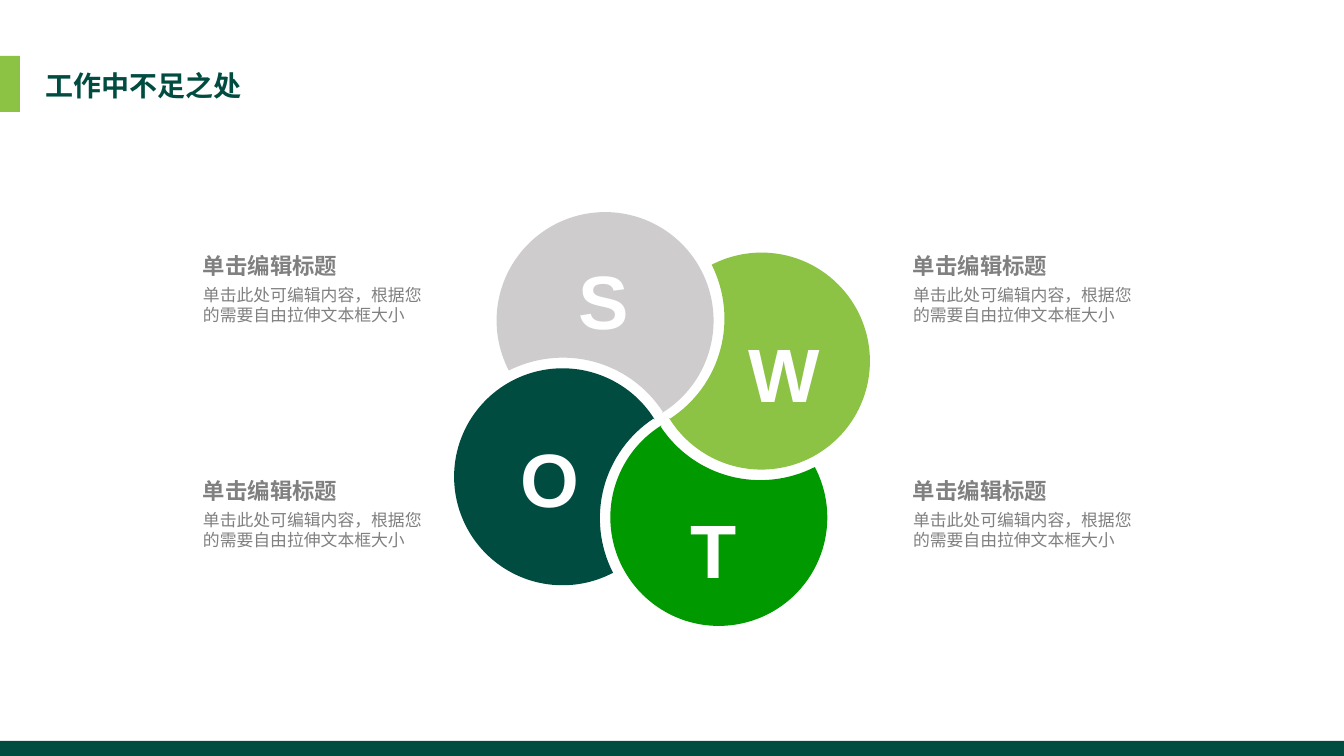
from math import cos, radians, sin, tan

from lxml.etree import SubElement
from pptx import Presentation
from pptx.dml.color import RGBColor
from pptx.enum.shapes import MSO_SHAPE as Shape
from pptx.enum.text import MSO_ANCHOR as Anchor, MSO_AUTO_SIZE as AutoSize, PP_ALIGN as Align
from pptx.oxml.ns import qn
from pptx.util import Inches, Pt

TITLE = "工作中不足之处"
HEADING = "单击编辑标题"
DETAIL = "单击此处可编辑内容，根据您的需要自由拉伸文本框大小"
PETALS = [
    ("S", "silver", (608, 311), 323.3, (531, 247)),
    ("W", "lime", (771, 364), 53.4, (712, 320)),
    ("T", "green", (716, 527), 143, (641, 496)),
    ("O", "forest", (553, 474), 233, (477, 425)),
]
BARS = [("lime", (0, 56, 20, 56)), ("forest", (0, 741, 1344, 15))]
CAPTION_LEFTS = (203, 913)
CAPTION_TOPS = (252, 477)
COLORS = {
    "silver": "CECCCC",
    "lime": "8CC345",
    "green": "009900",
    "forest": "004C41",
    "gray": "808080",
    "white": "FFFFFF",
}

PETAL_WIDTH, PETAL_HEIGHT = 230, 234
OUTER_ARC = {"center": (107, 123), "radius": 108.5, "start": 95.1, "end": -170.7, "pieces": 4}
NOTCH_ARC = {"center": (-20, 223), "radius": 119, "start": -80.5, "end": 3.7, "pieces": 2}
PX = Inches(10) / 1344


def px(*lengths):
    return [round(length * PX) for length in lengths]


def paint(shape, color):
    shape.shadow.inherit = False
    shape.fill.solid()
    shape.fill.fore_color.rgb = RGBColor.from_string(COLORS[color])
    shape.line.fill.background()


def write(shape, text, size, color, bold=True, align=Align.LEFT, margins=None):
    frame = shape.text_frame
    frame.word_wrap = True
    frame.auto_size = AutoSize.NONE
    if margins is not None:
        frame.margin_left = frame.margin_right = margins
        frame.margin_top = frame.margin_bottom = margins
    frame.text = text
    paragraph = frame.paragraphs[0]
    paragraph.alignment = align
    font = paragraph.font
    font.name, font.size, font.bold = "Arial", Pt(size), bold
    font.color.rgb = RGBColor.from_string(COLORS[color])


def arc_curves(center, radius, start, end, pieces):
    step = radians(end - start) / pieces
    reach = 4 / 3 * tan(step / 4)

    def point(angle, pull):
        return (center[0] + radius * (cos(angle) - pull * sin(angle)),
                center[1] + radius * (sin(angle) + pull * cos(angle)))

    angles = [radians(start) + step * i for i in range(pieces + 1)]
    return [(point(a, 0), point(a, reach), point(b, -reach), point(b, 0))
            for a, b in zip(angles, angles[1:])]


def add_command(outline, tag, points):
    command = SubElement(outline, qn(tag))
    for point in points:
        x, y = px(*point)
        SubElement(command, qn("a:pt"), x=str(x), y=str(y))


def add_petal(shapes, center, tilt):
    width, height = px(PETAL_WIDTH, PETAL_HEIGHT)
    left, top = px(center[0] - PETAL_WIDTH / 2, center[1] - PETAL_HEIGHT / 2)
    builder = shapes.build_freeform(0, 0)
    builder.add_line_segments([(width, 0), (width, height), (0, height)])
    petal = builder.convert_to_shape(left, top)
    petal.rotation = tilt
    outline = next(petal.element.iter(qn("a:path")))
    for corner in list(outline):
        outline.remove(corner)
    curves = arc_curves(**OUTER_ARC) + arc_curves(**NOTCH_ARC)
    add_command(outline, "a:moveTo", curves[0][:1])
    for curve in curves:
        add_command(outline, "a:cubicBezTo", curve[1:])
    SubElement(outline, qn("a:close"))
    return petal


prs = Presentation()
prs.slide_width, prs.slide_height = px(1344, 756)
slide = prs.slides.add_slide(prs.slide_layouts[5])
shapes = slide.shapes

title = shapes.title
title.left, title.top, title.width, title.height = px(32, 62, 296, 47)
write(title, TITLE, 15, "forest")
title.text_frame.vertical_anchor = Anchor.MIDDLE

for color, box in BARS:
    paint(shapes.add_shape(Shape.RECTANGLE, *px(*box)), color)

for letter, color, center, tilt, corner in PETALS:
    paint(add_petal(shapes, center, tilt), color)

for letter, color, center, tilt, corner in PETALS:
    label = shapes.add_textbox(*px(*corner, 145, 103))
    write(label, letter, 40.5, "white", align=Align.CENTER)

for left in CAPTION_LEFTS:
    for top in CAPTION_TOPS:
        caption = shapes.add_group_shape().shapes
        heading = caption.add_textbox(*px(left, top, 258, 27))
        write(heading, HEADING, 12, "gray", margins=0)
        detail = caption.add_textbox(*px(left, top + 33, 224, 40))
        write(detail, DETAIL, 9, "gray", bold=False, margins=0)

prs.save("out.pptx")
